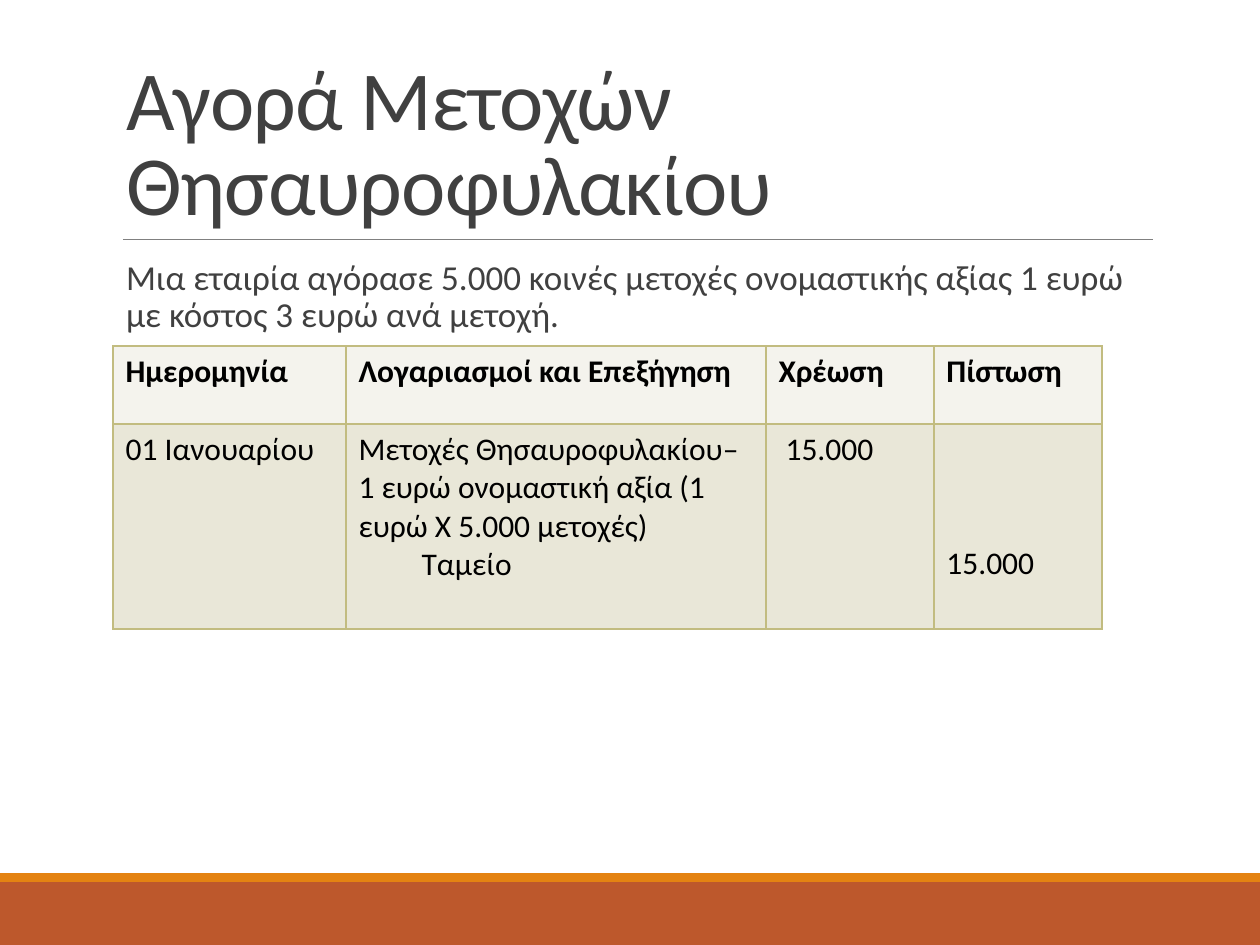
from lxml import etree
from pptx import Presentation
from pptx.dml.color import RGBColor
from pptx.enum.shapes import MSO_CONNECTOR, MSO_SHAPE
from pptx.enum.text import MSO_ANCHOR, MSO_AUTO_SIZE, PP_ALIGN
from pptx.oxml.ns import qn
from pptx.util import Emu, Pt

RECT = MSO_SHAPE.RECTANGLE
LINE = MSO_CONNECTOR.STRAIGHT
TOP, BOTTOM = MSO_ANCHOR.TOP, MSO_ANCHOR.BOTTOM
LEFT = PP_ALIGN.LEFT
FIXED = MSO_AUTO_SIZE.NONE

RUST = RGBColor(0xBD, 0x58, 0x2C)
ORANGE = RGBColor(0xE4, 0x83, 0x12)
GRAY = RGBColor(0x80, 0x80, 0x80)
DARK = RGBColor(0x40, 0x40, 0x40)
BLACK = RGBColor(0, 0, 0)
OLIVE = RGBColor(0xC2, 0xBC, 0x80)
PALE = RGBColor(0xF4, 0xF3, 0xED)
BEIGE = RGBColor(0xE9, 0xE7, 0xD8)


def px(n):
    return Emu(round(n * 914400 / 126))


class Deck:
    font = "Calibri"

    def __init__(self, wide, high):
        self.prs = Presentation()
        self.prs.slide_width, self.prs.slide_height = px(wide), px(high)
        self.slide = self.prs.slides.add_slide(self.prs.slide_layouts[5])
        self.shapes = self.slide.shapes

    def add_text(self, para, text, size, color, bold=False):
        para.alignment = LEFT
        run = para.add_run()
        run.text = text
        font = run.font
        font.name, font.size, font.bold = self.font, Pt(size), bold
        font.color.rgb = color
        return run

    def frame(self, shape, anchor):
        frame = shape.text_frame
        frame.word_wrap = True
        frame.auto_size = FIXED
        frame.vertical_anchor = anchor
        frame.margin_left = frame.margin_right = px(13)
        frame.margin_top = frame.margin_bottom = px(6)
        return frame

    def title(self, text, x, y, w, h):
        shape = self.shapes.title
        shape.left, shape.top, shape.width, shape.height = map(px, (x, y, w, h))
        para = self.frame(shape, BOTTOM).paragraphs[0]
        para.line_spacing = 0.85
        run = self.add_text(para, text, 48, DARK)
        run._r.get_or_add_rPr().set("spc", "-50")

    def body(self, text, x, y, w, h):
        box = self.shapes.add_textbox(*map(px, (x, y, w, h)))
        frame = self.frame(box, TOP)
        frame.margin_right = 0
        para = frame.paragraphs[0]
        para.line_spacing = 0.9
        para.space_before, para.space_after = Pt(12), Pt(2)
        self.add_text(para, text, 20, DARK)

    def bar(self, color, x, y, w, h):
        shape = self.shapes.add_shape(RECT, *map(px, (x, y, w, h)))
        shape.shadow.inherit = False
        shape.fill.solid()
        shape.fill.fore_color.rgb = color
        shape.line.fill.background()

    def rule(self, color, x, y, end):
        line = self.shapes.add_connector(LINE, *map(px, (x, y, end, y)))
        line.line.color.rgb = color
        line.line.width = Pt(0.5)
        etree.SubElement(line._element.spPr, qn("a:effectLst"))

    def edge(self, cell, color):
        props = cell._tc.get_or_add_tcPr()
        for side in ("lnL", "lnR", "lnT", "lnB"):
            line = etree.SubElement(props, qn(f"a:{side}"), w=str(Pt(1)))
            fill = etree.SubElement(line, qn("a:solidFill"))
            etree.SubElement(fill, qn("a:srgbClr"), val=str(color))

    def table(self, rows, x, y, cols, highs):
        size = map(px, (x, y, sum(cols), sum(highs)))
        table = self.shapes.add_table(len(rows), len(cols), *size).table
        for col, wide in zip(table.columns, cols):
            col.width = px(wide)
        for r, (row, high) in enumerate(zip(rows, highs)):
            table.rows[r].height = px(high)
            for c, lines in enumerate(row):
                cell = table.cell(r, c)
                self.edge(cell, OLIVE)
                cell.fill.solid()
                cell.fill.fore_color.rgb = BEIGE if r else PALE
                frame = cell.text_frame
                for i, text in enumerate(lines):
                    para = frame.add_paragraph() if i else frame.paragraphs[0]
                    if i:
                        para.level = 1
                        para._p.get_or_add_pPr().set("marL", str(px(63)))
                    self.add_text(para, text, 18, BLACK, r == 0)
        return table


def main():
    deck = Deck(1260, 945)
    deck.bar(RUST, 0, 882, 1260, 63)
    deck.bar(ORANGE, 0, 873, 1260, 9)
    deck.rule(GRAY, 123, 239, 1153)
    deck.title("Αγορά Μετοχών Θησαυροφυλακίου", 113, 39, 1040, 200)
    deck.body(
        "Μια εταιρία αγόρασε 5.000 κοινές μετοχές ονομαστικής αξίας 1 ευρώ "
        "με κόστος 3 ευρώ ανά μετοχή.", 113, 254, 1040, 554)
    rows = [
        [["Ημερομηνία"], ["Λογαριασμοί και Επεξήγηση"], ["Χρέωση"], ["Πίστωση"]],
        [["01 Ιανουαρίου"],
         ["Μετοχές Θησαυροφυλακίου– 1 ευρώ ονομαστική αξία "
          "(1 ευρώ Χ 5.000 μετοχές)", "Ταμείο"],
         [" 15.000"], ["15.000"]],
    ]
    table = deck.table(rows, 113, 346, [233, 420, 168, 168], [78, 205])
    table.cell(1, 3).margin_top = px(121)
    deck.prs.save("out.pptx")


if __name__ == "__main__":
    main()
